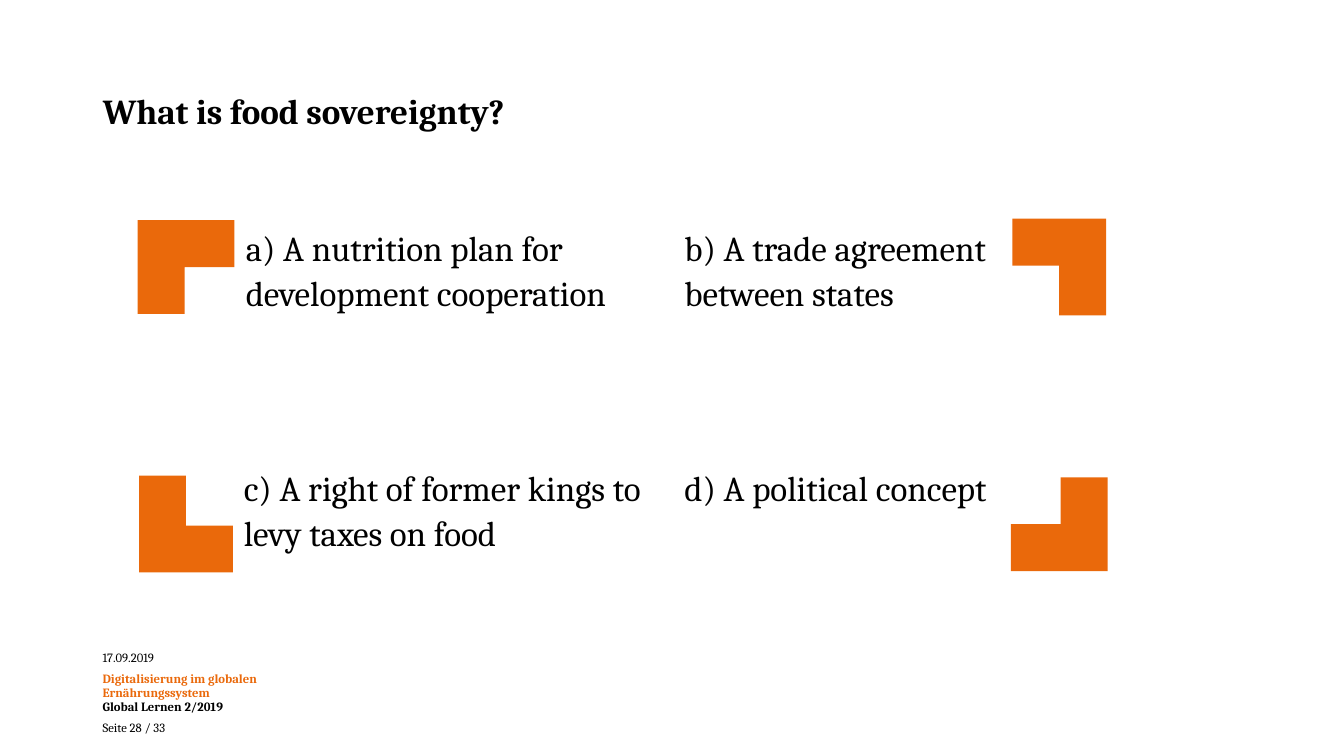
from pptx import Presentation
from pptx.dml.color import RGBColor
from pptx.enum.shapes import MSO_SHAPE
from pptx.enum.text import MSO_ANCHOR, MSO_AUTO_SIZE, PP_ALIGN
from pptx.util import Inches, Pt

COLORS = {"text": "000000", "accent": "EA690B", "background": "FFFFFF"}
FONT = "Cambria"
WIDTH, HEIGHT = Inches(13.33), Inches(7.5)
COL, ROW = WIDTH / 100, HEIGHT / 100

CORNER_COLS, CORNER_ROWS = (10.35, 75.32), (28.93, 62.93)
ANSWER_ROWS = (28.93, 60.67)
ANSWERS = [
    ("a) A nutrition plan for development cooperation", 0, 0, 17.55, 90),
    ("b) A trade agreement between states", 1, 0, 50.19, 180),
    ("c) A right of former kings to levy taxes on food", 0, 1, 17.4, 0),
    ("d) A political concept", 1, 1, 50.19, 270),
]
FOOTER = [
    ("17.09.2019", "text", False, 5),
    ("Digitalisierung im globalen Ernährungssystem", "accent", True, 0),
    ("Global Lernen 2/2019", "text", True, 5),
    ("Seite 28 / 33", "text", False, 0),
]


def grid(col, row, cols, rows):
    """Turn grid columns and rows into left, top, width and height."""
    return int(col * COL), int(row * ROW), int(cols * COL), int(rows * ROW)


def add_run(p, text, size, color="text", bold=False):
    """Add one formatted run to a paragraph."""
    r = p.add_run()
    r.text = text
    r.font.name = FONT
    r.font.size = Pt(size)
    r.font.bold = bold
    r.font.color.rgb = RGBColor.from_string(COLORS[color])


def add_box(s, *cells):
    """Add a wrapping text box and return its text frame."""
    tf = s.shapes.add_textbox(*grid(*cells)).text_frame
    tf.word_wrap = True
    return tf


def set_title(s, text):
    """Place and format the title placeholder."""
    sp = s.shapes.title
    sp.left, sp.top, sp.width, sp.height = grid(6.9, 5.33, 86.27, 19.33)
    tf = sp.text_frame
    tf.auto_size = MSO_AUTO_SIZE.NONE
    tf.vertical_anchor = MSO_ANCHOR.MIDDLE
    p = tf.paragraphs[0]
    p.alignment = PP_ALIGN.LEFT
    p.line_spacing = 0.9
    p.space_before = Pt(0)
    add_run(p, text, 25, bold=True)


def add_corner(s, col, row, rotation):
    """Add an orange corner bracket turned by the given angle."""
    sp = s.shapes.add_shape(MSO_SHAPE.CORNER, *grid(col, row, 6.98, 12.8))
    sp.rotation = rotation
    sp.shadow.inherit = False
    sp.fill.solid()
    sp.fill.fore_color.rgb = RGBColor.from_string(COLORS["accent"])
    sp.line.fill.background()


def add_answer(s, text, col, row):
    """Add the text of one possible answer."""
    p = add_box(s, col, row, 32, 17.33).paragraphs[0]
    p.line_spacing = 1.07
    add_run(p, text, 25)


def add_footer(s):
    """Add the date, event and page lines."""
    tf = add_box(s, 6.9, 85.47, 19.5, 12.67)
    for i, (text, color, bold, after) in enumerate(FOOTER):
        p = tf.add_paragraph() if i else tf.paragraphs[0]
        p.line_spacing = Pt(10)
        p.space_after = Pt(after)
        add_run(p, text, 9, color, bold)


def main():
    """Build and save the quiz slide."""
    prs = Presentation()
    prs.slide_width, prs.slide_height = WIDTH, HEIGHT
    s = prs.slides.add_slide(prs.slide_layouts[5])
    s.background.fill.solid()
    s.background.fill.fore_color.rgb = RGBColor.from_string(COLORS["background"])
    add_footer(s)
    set_title(s, "What is food sovereignty?")
    for text, side, level, col, rotation in ANSWERS:
        add_corner(s, CORNER_COLS[side], CORNER_ROWS[level], rotation)
        add_answer(s, text, col, ANSWER_ROWS[level])
    prs.save("out.pptx")


if __name__ == "__main__":
    main()
